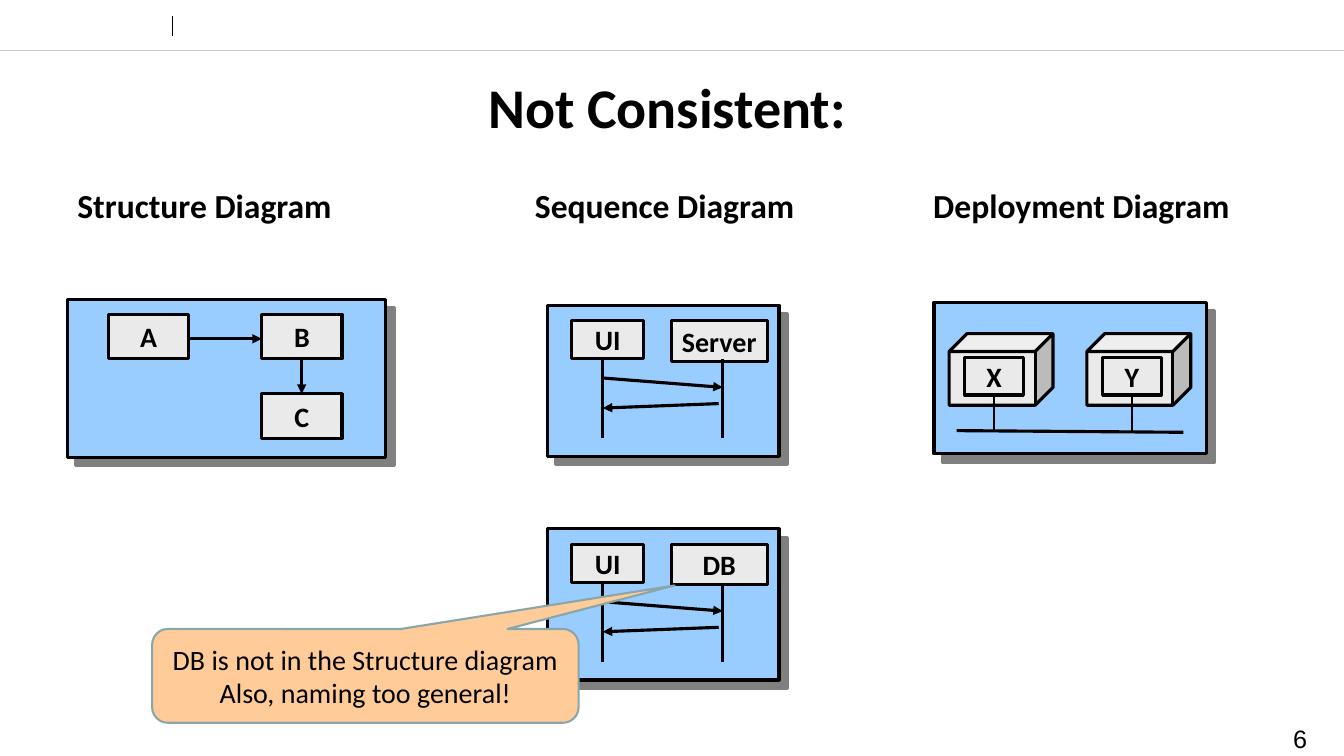
from lxml import etree
from pptx import Presentation
from pptx.dml.color import RGBColor as Color
from pptx.enum.shapes import MSO_CONNECTOR as Link, MSO_SHAPE as Form
from pptx.enum.text import MSO_ANCHOR as Anchor, PP_ALIGN as Align
from pptx.oxml.ns import qn
from pptx.util import Pt

HUES = {
    "ink": "000000", "rule": "CCCCCC", "panel": "99CCFF", "node": "EAEAEA",
    "shade": "808080", "note": "FFCC99", "edge": "8AA6A8",
}


class Sketch:
    """Hold the style and the current slide, and draw each kind of element."""

    def __init__(self, deck):
        self.slide = deck.slides.add_slide(deck.slide_layouts[6])
        self.shapes = self.slide.shapes
        self.font = "Calibri"

    def hue(self, name):
        return Color.from_string(HUES[name])

    def letter(self, shape, text, size, bold, align, wrap, font=None):
        frame = shape.text_frame
        frame.text = text
        frame.word_wrap = wrap
        for para in frame.paragraphs:
            para.alignment = align
            for run in para.runs:
                run.font.name = font or self.font
                run.font.size = Pt(size)
                run.font.bold = bold
                run.font.color.rgb = self.hue("ink")
        return frame

    def label(self, text, x, y, w, h, size=24, bold=True, align=Align.LEFT,
              wrap=False, font=None):
        box = self.shapes.add_textbox(Pt(x), Pt(y), Pt(w), Pt(h))
        return self.letter(box, text, size, bold, align, wrap, font)

    def block(self, form, x, y, w, h, fill="node", edge="ink", width=2.25):
        shape = self.shapes.add_shape(form, Pt(x), Pt(y), Pt(w), Pt(h))
        shape.shadow.inherit = False
        shape.fill.solid()
        shape.fill.fore_color.rgb = self.hue(fill)
        shape.line.color.rgb = self.hue(edge)
        shape.line.width = Pt(width)
        return shape

    def panel(self, x, y, w, h):
        shape = self.block(Form.RECTANGLE, x, y, w, h, "panel")
        effects = shape.element.spPr.find(qn("a:effectLst"))
        shade = etree.SubElement(effects, qn("a:outerShdw"), blurRad="0",
                                 dist=str(Pt(8.5)), dir="2700000",
                                 algn="ctr", rotWithShape="0")
        etree.SubElement(shade, qn("a:srgbClr"), val=HUES["shade"])

    def node(self, text, x, y, w, h):
        shape = self.block(Form.RECTANGLE, x, y, w, h)
        frame = self.letter(shape, text, 20, True, Align.CENTER, False)
        frame.vertical_anchor = Anchor.MIDDLE
        frame.margin_top = frame.margin_bottom = 0

    def line(self, x1, y1, x2, y2, width=2.25, arrow=False, hue="ink"):
        link = self.shapes.add_connector(Link.STRAIGHT, Pt(x1), Pt(y1),
                                         Pt(x2), Pt(y2))
        link.line.color.rgb = self.hue(hue)
        link.line.width = Pt(width)
        props = link.element.spPr
        if arrow:
            etree.SubElement(props.find(qn("a:ln")), qn("a:tailEnd"),
                             type="triangle")
        etree.SubElement(props, qn("a:effectLst"))

    def sequence(self, y, right):
        self.panel(391, y, 165.5, 108)
        self.node("UI", 408.2, y + 11, 51.8, 27.2)
        self.node(right, 479.5, y + 11, 68.5, 29)
        self.line(430.6, y + 52, 516.2, y + 58.7, arrow=True)
        for x in (430.6, 516.2):
            self.line(x, y + 38.5, x, y + 95)
        self.line(513.4, y + 70.3, 430.6, y + 73.5, arrow=True)

    def server(self, x, text):
        self.block(Form.CUBE, x, 238.3, 74.2, 51.1)
        self.node(text, x + 11.2, 255.6, 41.8, 26.6)
        self.line(x + 32, 282.2, x + 32, 307.6, 1.5)

    def callout(self, text, x, y, w, h, bends):
        shape = self.block(Form.ROUNDED_RECTANGULAR_CALLOUT, x, y, w, h,
                           "note", "edge", 1.5)
        for i, bend in enumerate(bends):
            shape.adjustments[i] = bend
        frame = self.letter(shape, text, 20, False, Align.CENTER, True)
        frame.vertical_anchor = Anchor.MIDDLE


def main():
    deck = Presentation()
    deck.slide_width, deck.slide_height = Pt(960), Pt(540)
    art = Sketch(deck)

    art.line(0, 36, 960, 36, 0.25, hue="rule")
    art.line(123, 11.5, 123, 26, 0.5)
    title = art.label("Not Consistent:", 142, 42.5, 669, 66, 40,
                      align=Align.CENTER, wrap=True)
    title.vertical_anchor = Anchor.MIDDLE
    art.label("6", 916.6, 513.4, 150, 24, 18, False, wrap=True, font="Arial")
    for text, x, w in (("Structure Diagram", 48.2, 198.7),
                       ("Sequence Diagram", 375, 202.3),
                       ("Deployment Diagram", 659.5, 229)):
        art.label(text, x, 128.2, w, 36)

    art.panel(48.2, 213.8, 227.5, 113)
    for text, x, y in (("A", 77.5, 224.6), ("B", 187, 224.6),
                       ("C", 187, 281.2)):
        art.node(text, x, y, 57.3, 31.8)
    art.line(134.8, 242, 187, 242, arrow=True)
    art.line(215.5, 256.4, 215.5, 281.2, arrow=True)

    art.sequence(218, "Server")
    art.sequence(377.8, "DB")

    art.panel(667.2, 216, 194.4, 108)
    art.server(678, "X")
    art.server(776.4, "Y")
    art.line(683.3, 307.6, 845.3, 308.8)

    art.callout("DB is not in the Structure diagram\nAlso, naming too general!",
                108.7, 449.3, 304.6, 67, (0.725, -0.964, 0.167))
    deck.save("out.pptx")


if __name__ == "__main__":
    main()
